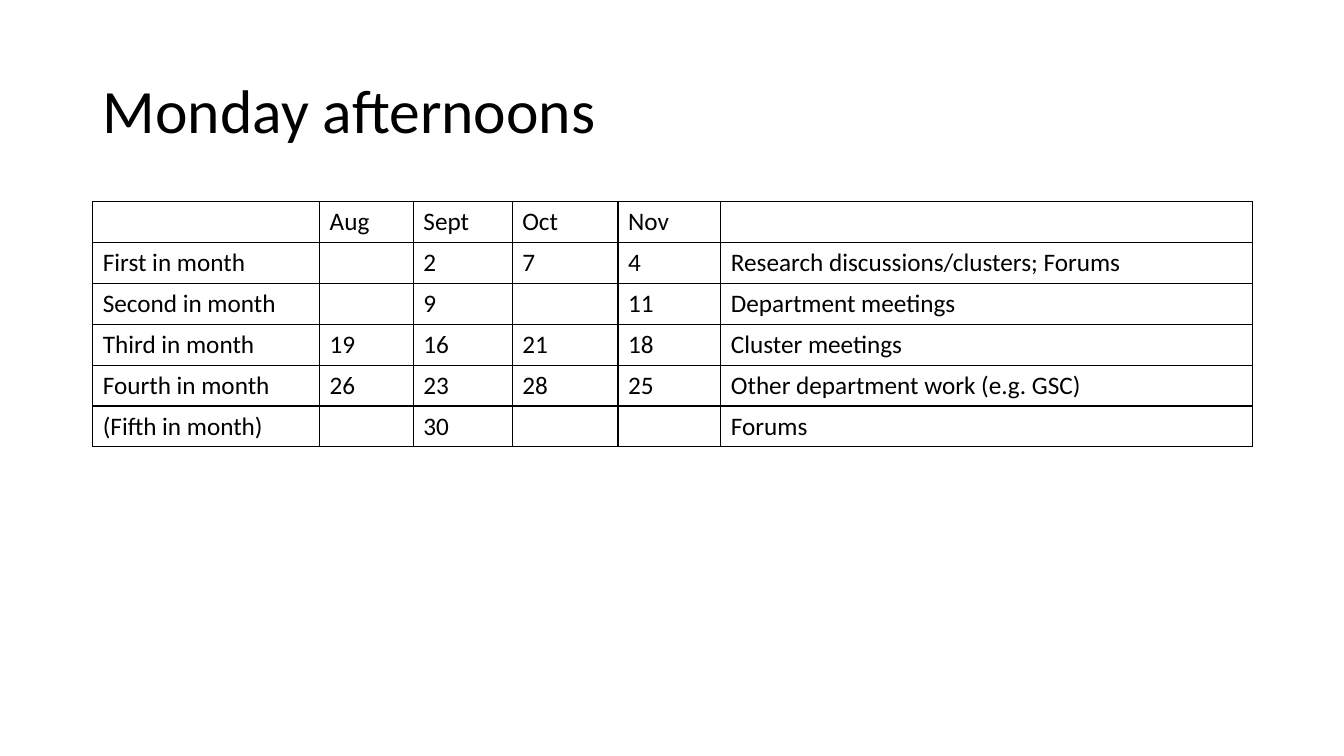
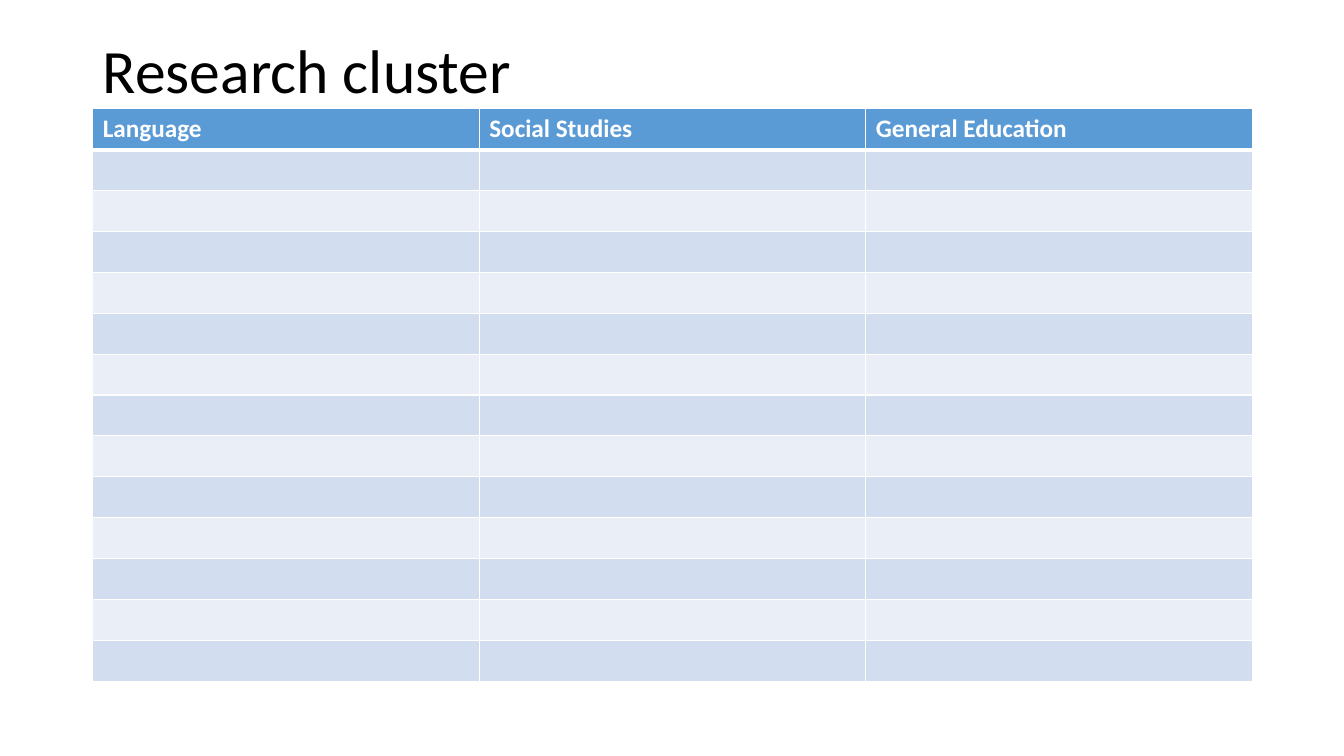
import pptx
import pptx.dml.color
import pptx.enum.text
import pptx.oxml
import pptx.oxml.ns
import pptx.util
from pptx.util import Inches

COLORS = {
    "text": "000000",
    "white": "FFFFFF",
    "header": "5B9BD5",
    "band_dark": "D2DEEF",
    "band_light": "EAEFF7",
}
FONT = "Calibri"
LEFT, WIDTH = Inches(0.92), Inches(11.5)
TITLE_HEIGHT = Inches(1.45)


def add_titled_table(title_text, title_top, table_top, table_height, rows, column_widths):
    slide = presentation.slides.add_slide(presentation.slide_layouts[5])
    title = slide.shapes.title
    title.left, title.top = LEFT, Inches(title_top)
    title.width, title.height = WIDTH, TITLE_HEIGHT
    title.text_frame.text = title_text
    title.text_frame.vertical_anchor = pptx.enum.text.MSO_ANCHOR.MIDDLE
    heading = title.text_frame.paragraphs[0]
    heading.alignment = pptx.enum.text.PP_ALIGN.LEFT
    heading.line_spacing = 0.9
    heading.font.name = FONT
    heading.font.size = pptx.util.Pt(44)
    heading.font.color.rgb = pptx.dml.color.RGBColor.from_string(COLORS["text"])

    table = slide.shapes.add_table(
        len(rows), len(column_widths), LEFT, Inches(table_top), WIDTH, Inches(table_height)
    ).table
    table.horz_banding = False
    for column, width in zip(table.columns, column_widths):
        column.width = Inches(width)
    for r, row in enumerate(rows):
        for c, text in enumerate(row):
            table.cell(r, c).text = text
    return table


def style_cell(cell, text_color, border_color, fill=None, bold=False, top=1, bottom=1):
    """Set font, fill and the four borders (widths in points)."""
    paragraph = cell.text_frame.paragraphs[0]
    paragraph.font.name = FONT
    paragraph.font.size = pptx.util.Pt(18)
    paragraph.font.bold = bold
    paragraph.font.color.rgb = pptx.dml.color.RGBColor.from_string(COLORS[text_color])
    properties = cell._tc.get_or_add_tcPr()
    for side, points in (("L", 1), ("R", 1), ("T", top), ("B", bottom)):
        properties.append(pptx.oxml.parse_xml(
            f'<a:ln{side} {pptx.oxml.ns.nsdecls("a")} w="{pptx.util.Pt(points)}">'
            f'<a:solidFill><a:srgbClr val="{COLORS[border_color]}"/></a:solidFill>'
            f'</a:ln{side}>'
        ))
    if fill:
        cell.fill.solid()
        cell.fill.fore_color.rgb = pptx.dml.color.RGBColor.from_string(COLORS[fill])
    else:
        cell.fill.background()


presentation = pptx.Presentation()
presentation.slide_width = Inches(13.33)
presentation.slide_height = Inches(7.5)

# Monday afternoons: a plain black grid
monday_rows = [
    ("", "Aug", "Sept", "Oct", "Nov", ""),
    ("First in month", "", "2", "7", "4", "Research discussions/clusters; Forums"),
    ("Second in month", "", "9", "", "11", "Department meetings"),
    ("Third in month", "19", "16", "21", "18", "Cluster meetings"),
    ("Fourth in month", "26", "23", "28", "25", "Other department work (e.g. GSC)"),
    ("(Fifth in month)", "", "30", "", "", "Forums"),
]
monday_table = add_titled_table(
    "Monday afternoons", 0.4, 2, 2.43, monday_rows, [2.25, 0.93, 0.98, 1.05, 1.02, 5.27]
)
monday_table.first_row = False
for cell in monday_table.iter_cells():
    style_cell(cell, "text", "text")

# Research cluster: a header above empty banded rows
cluster_names = ("Language", "Social Studies", "General Education")
cluster_rows = [cluster_names] + [("",) * len(cluster_names)] * 13
cluster_table = add_titled_table(
    "Research cluster", 0, 1.08, 5.68, cluster_rows, [11.5 / 3] * 3
)
for r, row in enumerate(cluster_table.rows):
    for cell in row.cells:
        if r == 0:
            style_cell(cell, "white", "white", "header", bold=True, bottom=3)
        else:
            band = "band_dark" if r % 2 else "band_light"
            style_cell(cell, "text", "white", band, top=3 if r == 1 else 1)

presentation.save("out.pptx")
